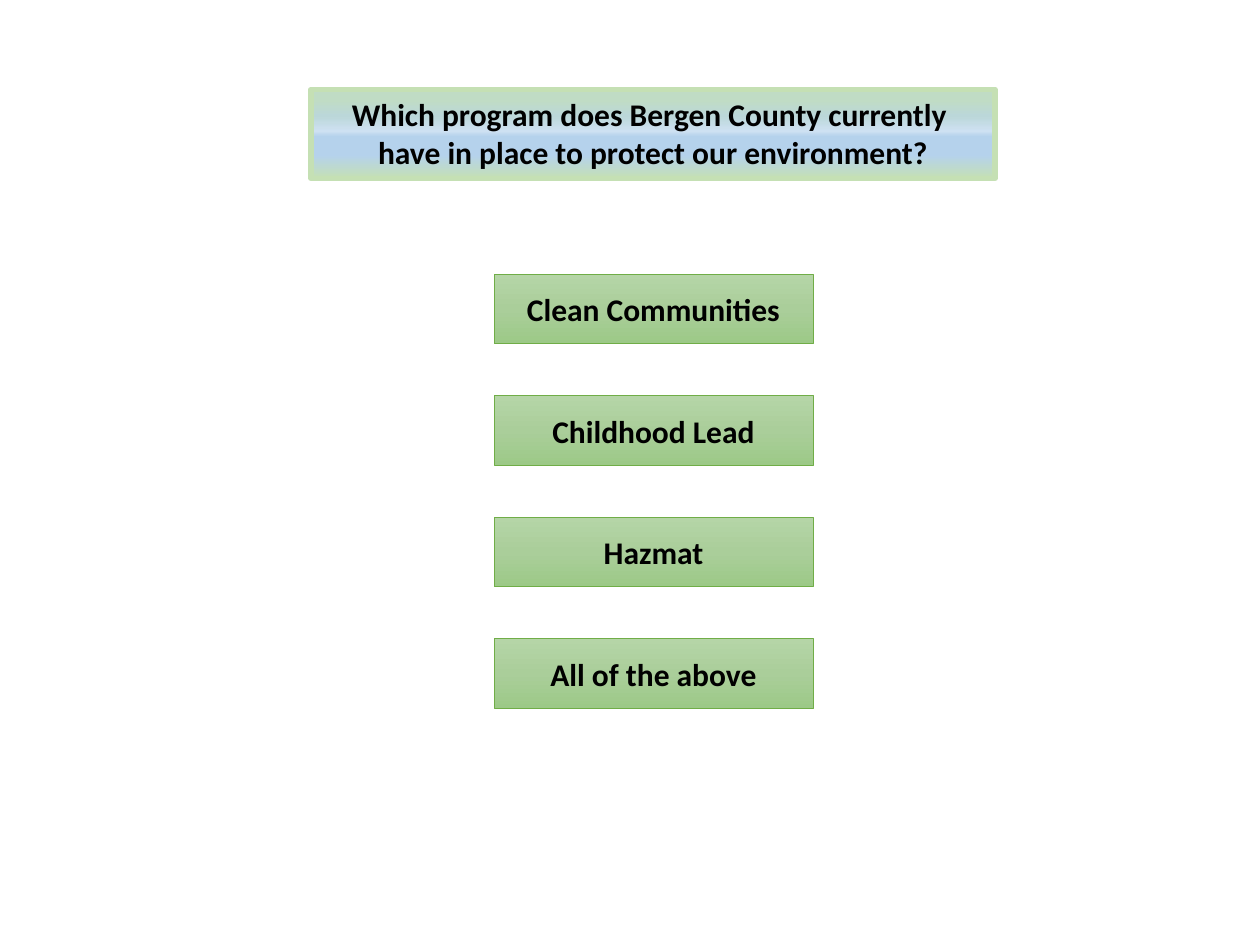
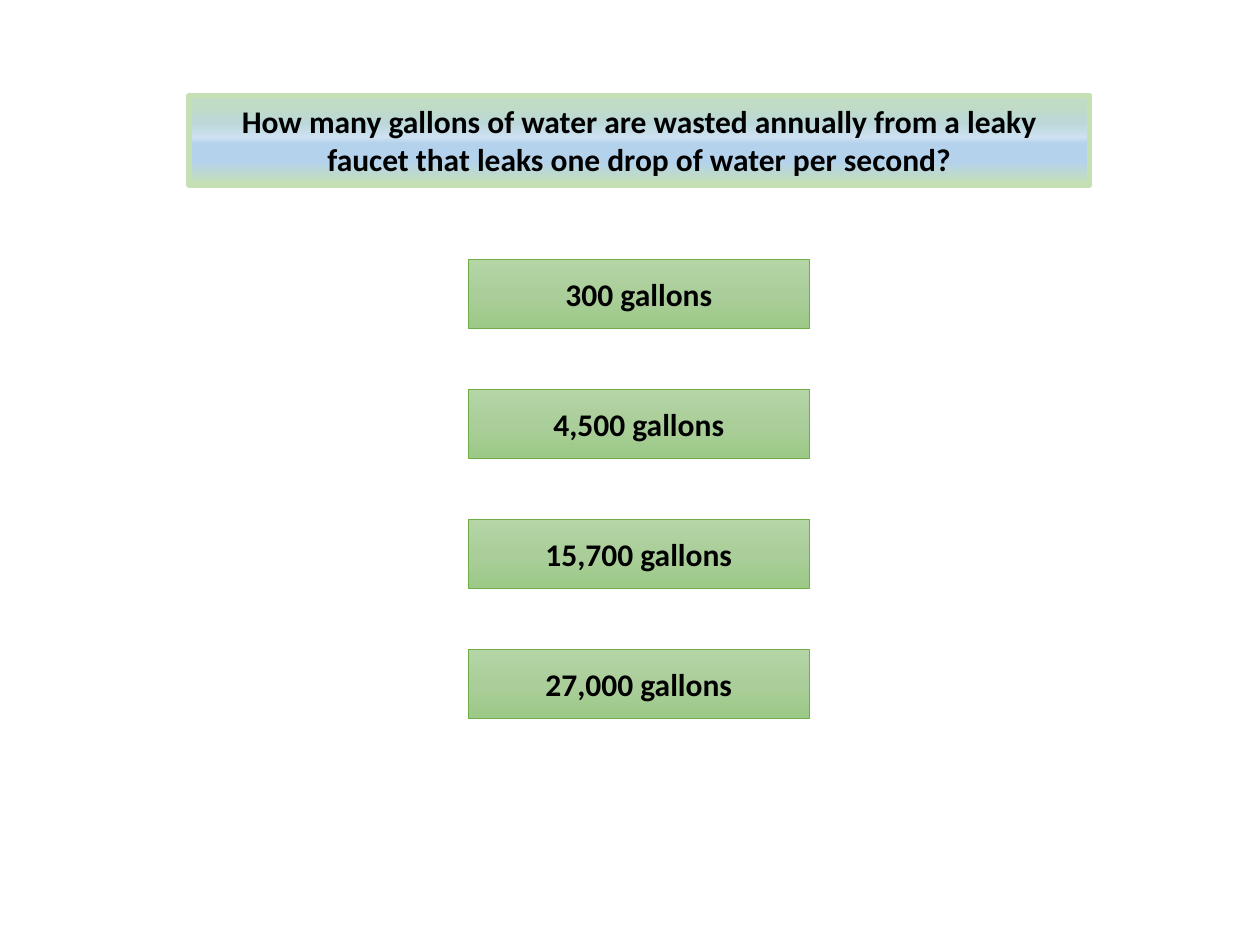
from lxml import etree
from pptx import Presentation
from pptx import util as u
from pptx.dml import color
from pptx.enum import shapes, text
from pptx.oxml import ns

HUES = {"ink": "000000", "edge": "70AD47", "rim": "C5E0B4"}
FADES = {
    "button": [(0, "B5D5A7"), (50, "AACE9A"), (100, "9CC987")],
    "title": [(12, "C0DCC5"), (30, "BBD7D9"), (47, "CEE1F2"),
              (53, "B5D2EC"), (74, "B5D2EC"), (100, "C5E0B4")],
}
FONT, SIZE = "Calibri", 18
HIGH = 1.4  # button height in cm

# Lengths in cm: title = left, top, width; buttons = left, top, width, step
QUIZ = [
    {"title": (6.27, 1.8, 13.79),
     "ask": ["Which program does Bergen County currently ",
             "have in place to protect our environment?"],
     "buttons": (9.96, 5.53, 6.43, 2.45),
     "picks": ["Clean Communities", "Childhood Lead", "Hazmat",
               "All of the above"]},
    {"title": (3.81, 1.93, 18.16),
     "ask": ["How many gallons of water are wasted annually from a leaky "
             "faucet that leaks one drop of water per second?"],
     "buttons": (9.45, 5.23, 6.86, 2.62),
     "picks": ["300 gallons", "4,500 gallons", "15,700 gallons",
               "27,000 gallons"]},
]


def fade(shape, stops):
    """Fill a shape from top to bottom with any number of stops."""
    shape.fill.gradient()
    shape.fill.gradient_angle = 270
    group = shape.fill.gradient_stops and shape._element.spPr.find(
        ".//" + ns.qn("a:gsLst"))
    for old in list(group):
        group.remove(old)
    for pos, hue in stops:
        stop = etree.SubElement(group, ns.qn("a:gs"), pos=str(pos * 1000))
        etree.SubElement(stop, ns.qn("a:srgbClr"), val=hue)


def write(frame, lines):
    """Put bold centred lines in a frame, one paragraph each."""
    frame.word_wrap = True
    for i, line in enumerate(lines):
        par = frame.add_paragraph() if i else frame.paragraphs[0]
        par.alignment = text.PP_ALIGN.CENTER
        run = par.add_run()
        run.text = line
        run.font.name, run.font.size, run.font.bold = FONT, u.Pt(SIZE), True
        run.font.color.rgb = color.RGBColor.from_string(HUES["ink"])


def panel(slide, kind, place, stops, edge, width, lines):
    """Add a shaded, outlined shape with text."""
    shape = slide.shapes.add_shape(kind, *[u.Cm(n) for n in place])
    shape.shadow.inherit = False
    fade(shape, stops)
    shape.line.color.rgb = color.RGBColor.from_string(edge)
    shape.line.width = u.Pt(width)
    write(shape.text_frame, lines)
    return shape


def title(slide, place, lines):
    box = panel(slide, shapes.MSO_SHAPE.RECTANGLE, (*place, 1.8),
                FADES["title"], HUES["rim"], 3, lines)
    box.text_frame.vertical_anchor = text.MSO_ANCHOR.TOP
    box.text_frame.auto_size = text.MSO_AUTO_SIZE.SHAPE_TO_FIT_TEXT


def buttons(slide, place, picks):
    left, top, width, step = place
    for i, pick in enumerate(picks):
        box = panel(slide, shapes.MSO_SHAPE.ACTION_BUTTON_CUSTOM,
                    (left, top + i * step, width, HIGH),
                    FADES["button"], HUES["edge"], 0.5, [pick])
        box.text_frame.vertical_anchor = text.MSO_ANCHOR.MIDDLE


def main():
    deck = Presentation()
    deck.slide_width, deck.slide_height = u.Cm(25.4), u.Cm(19.05)
    for item in QUIZ:
        slide = deck.slides.add_slide(deck.slide_layouts[6])
        # Answers first, then the question
        buttons(slide, item["buttons"], item["picks"])
        title(slide, item["title"], item["ask"])
    deck.save("out.pptx")


if __name__ == "__main__":
    main()
